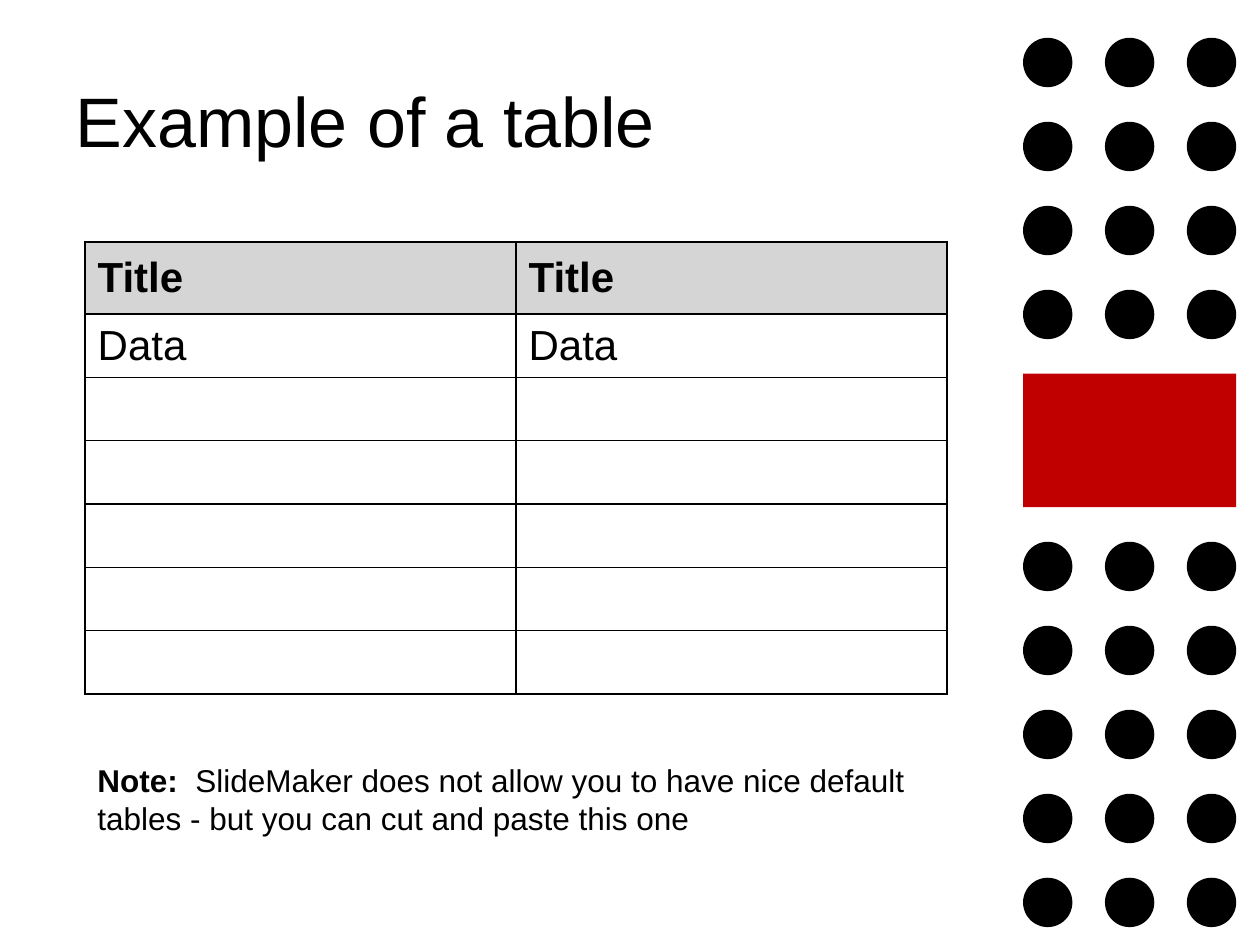
from lxml import etree
from pptx import Presentation
from pptx.dml import color
from pptx.enum import shapes, text
from pptx.oxml import ns
from pptx.util import Pt

BLACK = "000000"
RED = "C00000"
GREY = "D5D5D5"
WHITE = "FFFFFF"

DOT_LEFT, DOT_TOP = 584.6, 21.6
DOT_SIZE = 28.2
DOT_COLUMN_STEP, DOT_ROW_STEP = 46.8, 48
DOT_COLUMNS, DOT_ROWS = 3, 11
BLOCK_ROWS = (4, 5)

TABLE_ROWS = [["Title", "Title"], ["Data", "Data"]] + [["", ""]] * 5
COLUMN_WIDTH = 246.3
HEADER_HEIGHT, ROW_HEIGHT = 41, 36.2


def rgb(value):
    return color.RGBColor.from_string(value)


def add_text(paragraph, content, size=18, bold=False, fill=BLACK, font="Arial"):
    run = paragraph.add_run()
    run.text = content
    run.font.name = font
    run.font.size = Pt(size)
    run.font.bold = bold
    run.font.color.rgb = rgb(fill)


def add_filled_shape(slide, kind, left, top, width, height, fill):
    shape = slide.shapes.add_shape(kind, Pt(left), Pt(top), Pt(width), Pt(height))
    shape.shadow.inherit = False
    shape.fill.solid()
    shape.fill.fore_color.rgb = rgb(fill)
    shape.line.fill.background()


def add_side_band(slide):
    for row in range(DOT_ROWS):
        if row in BLOCK_ROWS:
            continue
        for column in range(DOT_COLUMNS):
            add_filled_shape(
                slide, shapes.MSO_SHAPE.OVAL,
                DOT_LEFT + column * DOT_COLUMN_STEP, DOT_TOP + row * DOT_ROW_STEP,
                DOT_SIZE, DOT_SIZE, BLACK)
    add_filled_shape(
        slide, shapes.MSO_SHAPE.RECTANGLE,
        DOT_LEFT, DOT_TOP + BLOCK_ROWS[0] * DOT_ROW_STEP,
        (DOT_COLUMNS - 1) * DOT_COLUMN_STEP + DOT_SIZE,
        DOT_ROW_STEP + DOT_SIZE, RED)


def add_title(slide, content):
    title = slide.shapes.title
    title.left, title.top, title.width, title.height = Pt(36), Pt(20), Pt(547), Pt(96.5)
    title.text_frame.vertical_anchor = text.MSO_ANCHOR.MIDDLE
    paragraph = title.text_frame.paragraphs[0]
    paragraph.alignment = text.PP_ALIGN.LEFT
    add_text(paragraph, content, size=40)


def set_borders(cell, width=1, fill=BLACK):
    properties = cell._tc.get_or_add_tcPr()
    for position, side in enumerate(("lnL", "lnR", "lnT", "lnB")):
        line = etree.Element(ns.qn(f"a:{side}"), w=str(Pt(width)))
        solid = etree.SubElement(line, ns.qn("a:solidFill"))
        etree.SubElement(solid, ns.qn("a:srgbClr"), val=fill)
        properties.insert(position, line)


def format_cell(cell, content, header):
    cell.vertical_anchor = text.MSO_ANCHOR.MIDDLE
    cell.margin_left = cell.margin_right = Pt(7.2)
    cell.margin_top = cell.margin_bottom = Pt(3.6)
    cell.fill.solid()
    cell.fill.fore_color.rgb = rgb(GREY if header else WHITE)
    set_borders(cell)
    if content:
        add_text(cell.text_frame.paragraphs[0], content, size=24, bold=header)


def add_data_table(slide, rows):
    width = COLUMN_WIDTH * len(rows[0])
    height = HEADER_HEIGHT + ROW_HEIGHT * (len(rows) - 1)
    table = slide.shapes.add_table(
        len(rows), len(rows[0]), Pt(48.6), Pt(138.4), Pt(width), Pt(height)).table
    for column in table.columns:
        column.width = Pt(COLUMN_WIDTH)
    for index, row in enumerate(rows):
        header = index == 0
        table.rows[index].height = Pt(HEADER_HEIGHT if header else ROW_HEIGHT)
        for column, content in enumerate(row):
            format_cell(table.cell(index, column), content, header)


def add_note(slide, label, content):
    box = slide.shapes.add_textbox(Pt(48.6), Pt(431.4), Pt(482.4), Pt(51))
    box.text_frame.word_wrap = True
    paragraph = box.text_frame.paragraphs[0]
    add_text(paragraph, label, bold=True)
    add_text(paragraph, content)


def main():
    presentation = Presentation()
    presentation.slide_width, presentation.slide_height = Pt(720), Pt(540)
    slide = presentation.slides.add_slide(presentation.slide_layouts[5])
    add_side_band(slide)
    add_title(slide, "Example of a table")
    add_data_table(slide, TABLE_ROWS)
    add_note(slide, "Note:  ",
             "SlideMaker does not allow you to have nice default tables"
             " - but you can cut and paste this one")
    presentation.save("out.pptx")


if __name__ == "__main__":
    main()
